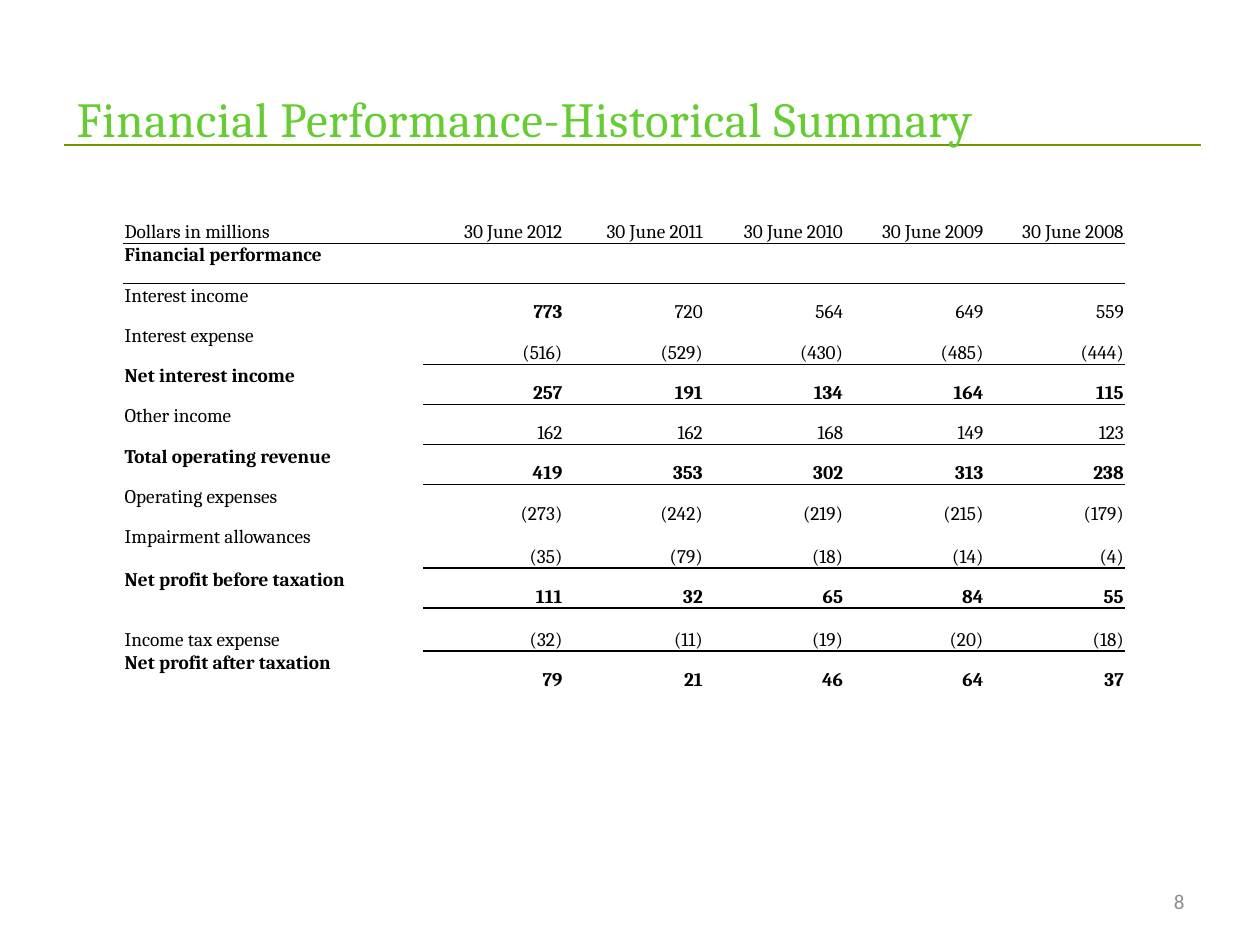
from dataclasses import dataclass

from lxml import etree
from pptx import Presentation
from pptx.dml.color import RGBColor
from pptx.enum.shapes import MSO_CONNECTOR
from pptx.enum.text import MSO_ANCHOR, PP_ALIGN
from pptx.oxml import parse_xml
from pptx.oxml.ns import nsdecls, qn
from pptx.util import Inches, Pt

LEFT, RIGHT = PP_ALIGN.LEFT, PP_ALIGN.RIGHT
TOP, MIDDLE, BOTTOM = MSO_ANCHOR.TOP, MSO_ANCHOR.MIDDLE, MSO_ANCHOR.BOTTOM
STRAIGHT = MSO_CONNECTOR.STRAIGHT
NO_STYLE = "{2D5ABB26-0587-4C30-8999-92F81FD0307C}"


@dataclass(frozen=True)
class Style:
    font: str
    size: float
    color: str


@dataclass(frozen=True)
class Theme:
    title: Style = Style("Cambria", 28, "66CC33")
    body: Style = Style("Cambria", 11, "000000")
    number: Style = Style("Calibri", 12, "8C8C8C")
    rule: str = "739600"
    rule_width: float = 0.75


@dataclass(frozen=True)
class Row:
    label: str
    values: tuple = ("",) * 5
    height: float = 0.32
    bold: bool = False
    bold_values: tuple = ()
    rule: float = 0
    rule_under_label: bool = False
    label_anchor: MSO_ANCHOR = TOP


THEME = Theme()
TABLE_LEFT, TABLE_TOP, TABLE_WIDTH, LABEL_WIDTH = 0.98, 1.55, 7.95, 2.38
ROWS = (
    Row("Dollars in millions", tuple(f"30 June {year}" for year in range(2012, 2007, -1)),
        height=0.38, rule=0.5, rule_under_label=True, label_anchor=BOTTOM),
    Row("Financial performance", bold=True),
    Row("Interest income", ("773", "720", "564", "649", "559"), bold_values=("773",)),
    Row("Interest expense", ("(516)", "(529)", "(430)", "(485)", "(444)"), rule=0.5),
    Row("Net interest income", ("257", "191", "134", "164", "115"), bold=True),
    Row("Other income", ("162", "162", "168", "149", "123"), rule=0.5),
    Row("Total operating revenue", ("419", "353", "302", "313", "238"), bold=True),
    Row("Operating expenses", ("(273)", "(242)", "(219)", "(215)", "(179)")),
    Row("Impairment allowances", ("(35)", "(79)", "(18)", "(14)", "(4)"),
        height=0.34, rule=1),
    Row("Net profit before taxation", ("111", "32", "65", "84", "55"), bold=True),
    Row("Income tax expense", ("(32)", "(11)", "(19)", "(20)", "(18)"),
        height=0.34, rule=1, label_anchor=BOTTOM),
    Row("Net profit after taxation", ("79", "21", "46", "64", "37"), bold=True),
)


def style_paragraph(para, style: Style, align: PP_ALIGN, bold: bool = False) -> None:
    para.alignment = align
    para.font.name = style.font
    para.font.size = Pt(style.size)
    para.font.bold = bold
    para.font.color.rgb = RGBColor.from_string(style.color)


def add_text(page, text: str, place: tuple, style: Style, align: PP_ALIGN,
             anchor: MSO_ANCHOR, top_inset: float = 0.05):
    box = page.shapes.add_textbox(*map(Inches, place))
    frame = box.text_frame
    frame.word_wrap = True
    frame.vertical_anchor = anchor
    frame.margin_top = Inches(top_inset)
    para = frame.paragraphs[0]
    para.text = text
    style_paragraph(para, style, align)
    return para


def add_title_rule(page) -> None:
    y = Inches(1.15)
    rule = page.shapes.add_connector(STRAIGHT, Inches(0.51), y, Inches(9.53), y)
    rule.line.color.rgb = RGBColor.from_string(THEME.rule)
    rule.line.width = Pt(THEME.rule_width)
    etree.SubElement(rule._element.spPr, qn("a:effectLst"))


def set_border(cell, side: str, width: float) -> None:
    """Draw one cell border; side is T or B."""
    border = parse_xml(
        f'<a:ln{side} {nsdecls("a")} w="{Pt(width)}"><a:solidFill>'
        f'<a:srgbClr val="{THEME.body.color}"/></a:solidFill></a:ln{side}>')
    cell._tc.get_or_add_tcPr().insert(0, border)


def fill_cell(cell, text: str, align: PP_ALIGN, anchor: MSO_ANCHOR, bold: bool) -> None:
    cell.fill.background()
    cell.margin_left = cell.margin_right = cell.margin_top = Inches(0.01)
    cell.margin_bottom = 0
    cell.vertical_anchor = anchor
    para = cell.text_frame.paragraphs[0]
    if text:
        para.text = text
    style_paragraph(para, THEME.body, align, bold)


def add_summary_table(page) -> None:
    value_count = len(ROWS[0].values)
    value_width = (TABLE_WIDTH - LABEL_WIDTH) / value_count
    height = sum(row.height for row in ROWS)
    table = page.shapes.add_table(
        len(ROWS), value_count + 1,
        *map(Inches, (TABLE_LEFT, TABLE_TOP, TABLE_WIDTH, height))).table
    table.first_row = table.horz_banding = False
    table._tbl.tblPr.find(qn("a:tableStyleId")).text = NO_STYLE
    for column, width in zip(table.columns, [LABEL_WIDTH] + [value_width] * value_count):
        column.width = Inches(width)

    for index, row in enumerate(ROWS):
        table.rows[index].height = Inches(row.height)
        fill_cell(table.cell(index, 0), row.label, LEFT, row.label_anchor, row.bold)
        for column, value in enumerate(row.values, start=1):
            fill_cell(table.cell(index, column), value, RIGHT, BOTTOM,
                      row.bold or value in row.bold_values)
        if row.rule:
            for column in range(0 if row.rule_under_label else 1, value_count + 1):
                set_border(table.cell(index, column), "B", row.rule)
                set_border(table.cell(index + 1, column), "T", row.rule)


def main() -> None:
    deck = Presentation()
    deck.slide_width, deck.slide_height = Inches(10), Inches(7.5)
    page = deck.slides.add_slide(deck.slide_layouts[6])
    add_title_rule(page)
    title = add_text(page, "Financial Performance-Historical Summary",
                     (0.51, 0.53, 8.98, 1.25), THEME.title, LEFT, TOP, top_inset=0.17)
    title.runs[0].font._element.set("spc", "40")
    add_text(page, "8", (7.17, 6.95, 2.33, 0.4), THEME.number, RIGHT, MIDDLE)
    add_summary_table(page)
    deck.save("out.pptx")


if __name__ == "__main__":
    main()
